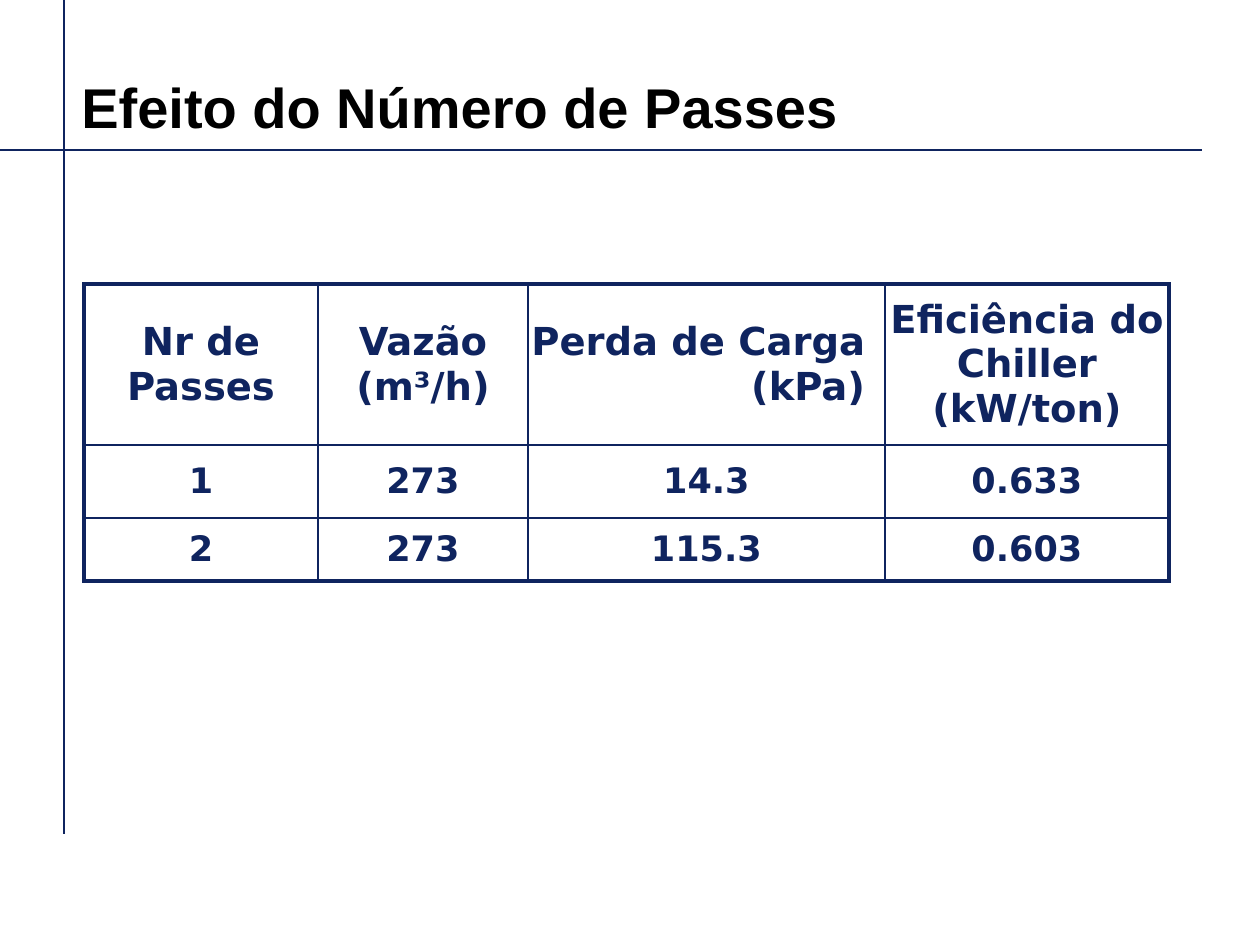
from lxml import etree
from pptx import Presentation
from pptx import util as u
from pptx.dml.color import RGBColor
from pptx.enum import shapes, text
from pptx.oxml.ns import qn

NAVY = RGBColor(0x0F, 0x24, 0x5F)
BLACK = RGBColor(0, 0, 0)
WHITE = RGBColor(255, 255, 255)
INNER, OUTER = 1, 2.25

HEADINGS = ["Nr de Passes", "Vazão\v(m³/h)", "Perda de Carga\v(kPa)",
            "Eficiência do Chiller (kW/ton)"]
RESULTS = [["1", "273", "14.3", "0.633"],
           ["2", "273", "115.3", "0.603"]]
COLUMN_WIDTHS = [234, 210, 357, 284]
ROW_HEIGHTS = [161, 73, 63]
PRESSURE_COLUMN = 2


def px(length):
    return u.Emu(round(length * 914400 / 126))


def write(frame, words, size, font, color, align=text.PP_ALIGN.LEFT, spacing=None):
    frame.word_wrap = True
    paragraph = frame.paragraphs[0]
    paragraph.text = words
    paragraph.alignment = align
    paragraph.line_spacing = spacing
    for run in paragraph.runs:
        run.font.size = u.Pt(size)
        run.font.name = font
        run.font.bold = True
        run.font.color.rgb = color


def draw_rule(slide, x1, y1, x2, y2):
    rule = slide.shapes.add_connector(
        shapes.MSO_CONNECTOR.STRAIGHT, px(x1), px(y1), px(x2), px(y2))
    rule.line.color.rgb = NAVY
    rule.line.width = u.Pt(0.75)
    etree.SubElement(rule._element.spPr, qn("a:effectLst"))


def draw_frame_rules(slide, width, height, margin, baseline):
    draw_rule(slide, margin, height, margin, 0)
    draw_rule(slide, 0, baseline, width, baseline)


def draw_title(slide, left, top, width, height):
    title = slide.shapes.add_textbox(px(left), px(top), px(width), px(height))
    title.text_frame.vertical_anchor = text.MSO_ANCHOR.BOTTOM
    write(title.text_frame, "Efeito do Número de Passes",
          size=32, font="Arial", color=BLACK, spacing=0.85)


def set_borders(cell, **widths):
    properties = cell._tc.get_or_add_tcPr()
    for side in "LRTB":
        line = etree.SubElement(properties, qn(f"a:ln{side}"), w=str(u.Pt(widths[side])))
        fill = etree.SubElement(line, qn("a:solidFill"))
        etree.SubElement(fill, qn("a:srgbClr"), val=str(NAVY))


def draw_results_table(slide, left, top, widths, heights):
    rows = [HEADINGS] + RESULTS
    last_row, last_column = len(rows) - 1, len(HEADINGS) - 1
    table = slide.shapes.add_table(
        len(rows), len(HEADINGS), px(left), px(top),
        px(sum(widths)), px(sum(heights))).table
    table.first_row = table.horz_banding = False
    for column, width in zip(table.columns, widths):
        column.width = px(width)
    for r, (row, height) in enumerate(zip(rows, heights)):
        table.rows[r].height = px(height)
        for c, words in enumerate(row):
            cell = table.cell(r, c)
            cell.margin_left = cell.margin_right = 0
            cell.margin_top = cell.margin_bottom = 0
            cell.vertical_anchor = text.MSO_ANCHOR.MIDDLE
            align = text.PP_ALIGN.CENTER
            if r == 0 and c == PRESSURE_COLUMN:
                align = text.PP_ALIGN.RIGHT
                cell.margin_right = px(20)
            write(cell.text_frame, words, size=20 if r else 22,
                  font="DejaVu Sans", color=NAVY, align=align)
            set_borders(cell,
                        L=OUTER if c == 0 else INNER,
                        R=OUTER if c == last_column else INNER,
                        T=OUTER if r == 0 else INNER,
                        B=OUTER if r == last_row else INNER)
            cell.fill.solid()
            cell.fill.fore_color.rgb = WHITE


def main():
    deck = Presentation()
    deck.slide_width, deck.slide_height = px(1260), px(945)
    slide = deck.slides.add_slide(deck.slide_layouts[6])
    draw_frame_rules(slide, width=1202, height=834, margin=64, baseline=150)
    draw_title(slide, 69, 3, 929, 143)
    draw_results_table(slide, 84, 284, COLUMN_WIDTHS, ROW_HEIGHTS)
    deck.save("out.pptx")


if __name__ == "__main__":
    main()
